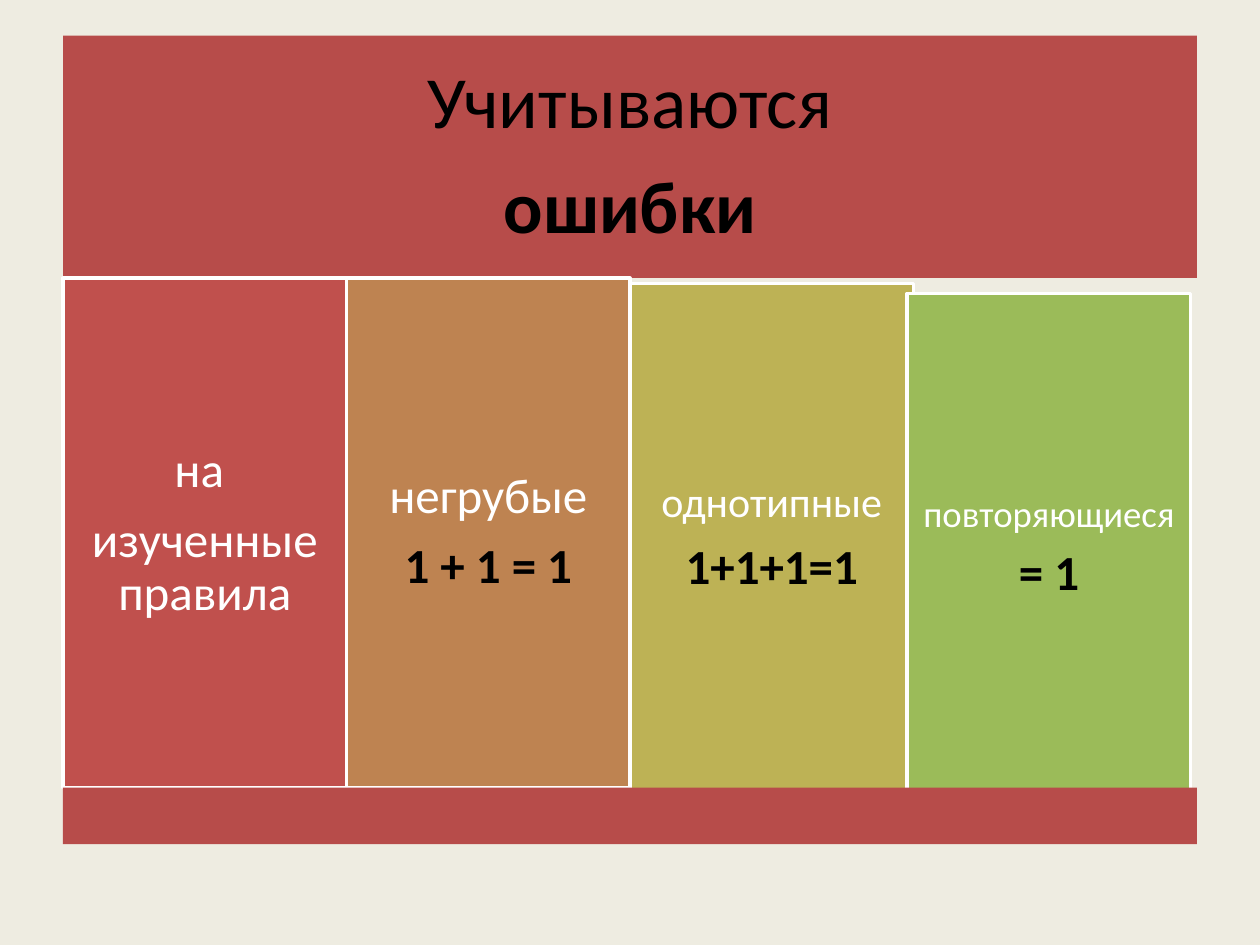
from pptx import Presentation
from pptx.dml.color import RGBColor
from pptx.enum.shapes import MSO_SHAPE
from pptx.enum.text import MSO_ANCHOR, MSO_AUTO_SIZE, PP_ALIGN
from pptx.util import Pt

BLACK = RGBColor(0x00, 0x00, 0x00)
WHITE = RGBColor(0xFF, 0xFF, 0xFF)
CREAM = RGBColor(0xEE, 0xEC, 0xE1)
BRICK = RGBColor(0xB7, 0x4C, 0x4A)
RED = RGBColor(0xC0, 0x50, 0x4D)
BROWN = RGBColor(0xBE, 0x83, 0x51)
OLIVE = RGBColor(0xBD, 0xB2, 0x55)
GREEN = RGBColor(0x9B, 0xBB, 0x59)

FONT = "Calibri"
LEFT, WIDE = 36, 648
TOP, HEAD = 20.4, 138.4
COL_TOP, COL_TALL = 159, 291
FOOT = 32.4

TITLE = [("Учитываются", 42, BLACK, False), ("ошибки", 42, BLACK, True)]
COLS = [
    {"fill": RED, "pad": 8.6, "shift": (0, 0),
     "lines": [("на ", 28, WHITE, False), ("изученные правила", 28, WHITE, False)]},
    {"fill": BROWN, "pad": 8.6, "shift": (0, 0),
     "lines": [("негрубые", 28, WHITE, False), ("1 + 1 = 1", 28, BLACK, True)]},
    {"fill": OLIVE, "pad": 7.2, "shift": (0, 3),
     "lines": [("однотипные", 24, WHITE, False), ("1+1+1=1", 28, BLACK, True)]},
    {"fill": GREEN, "pad": 6.5, "shift": (-3.6, 8.8),
     "lines": [("повторяющиеся", 21, WHITE, False), ("= 1", 28, BLACK, True)]},
]


def write(shape, lines, pad=0):
    frame = shape.text_frame
    frame.word_wrap = True
    frame.auto_size = MSO_AUTO_SIZE.NONE
    frame.vertical_anchor = MSO_ANCHOR.MIDDLE
    frame.margin_left = frame.margin_right = Pt(pad)
    frame.margin_top = frame.margin_bottom = Pt(pad)
    for i, (text, size, color, bold) in enumerate(lines):
        para = frame.add_paragraph() if i else frame.paragraphs[0]
        para.alignment = PP_ALIGN.CENTER
        para.line_spacing = 0.9
        para.space_before = Pt(0)
        para.space_after = Pt(round(size * 0.35, 1))
        run = para.add_run()
        run.text = text
        run.font.name = FONT
        run.font.size = Pt(size)
        run.font.bold = bold
        run.font.color.rgb = color


def paint(shape, fill, line=None):
    shape.fill.solid()
    shape.fill.fore_color.rgb = fill
    if line is None:
        shape.line.fill.background()
    else:
        shape.line.color.rgb = line
        shape.line.width = Pt(2)


def block(slide, x, y, w, h, fill, line=None):
    shape = slide.shapes.add_shape(MSO_SHAPE.RECTANGLE, Pt(x), Pt(y), Pt(w), Pt(h))
    shape.shadow.inherit = False
    paint(shape, fill, line)
    return shape


def main():
    deck = Presentation()
    deck.slide_width, deck.slide_height = Pt(720), Pt(540)
    slide = deck.slides.add_slide(deck.slide_layouts[5])
    slide.background.fill.solid()
    slide.background.fill.fore_color.rgb = CREAM

    title = slide.shapes.title
    title.left, title.top = Pt(LEFT), Pt(TOP)
    title.width, title.height = Pt(WIDE), Pt(HEAD)
    paint(title, BRICK)
    write(title, TITLE, pad=12)

    step = WIDE / len(COLS)
    for i, col in enumerate(COLS):
        dx, dy = col["shift"]
        card = block(slide, LEFT + i * step + dx, COL_TOP + dy, step, COL_TALL,
                     col["fill"], WHITE)
        write(card, col["lines"], pad=col["pad"])

    block(slide, LEFT, COL_TOP + COL_TALL, WIDE, FOOT, BRICK)
    deck.save("out.pptx")


if __name__ == "__main__":
    main()
